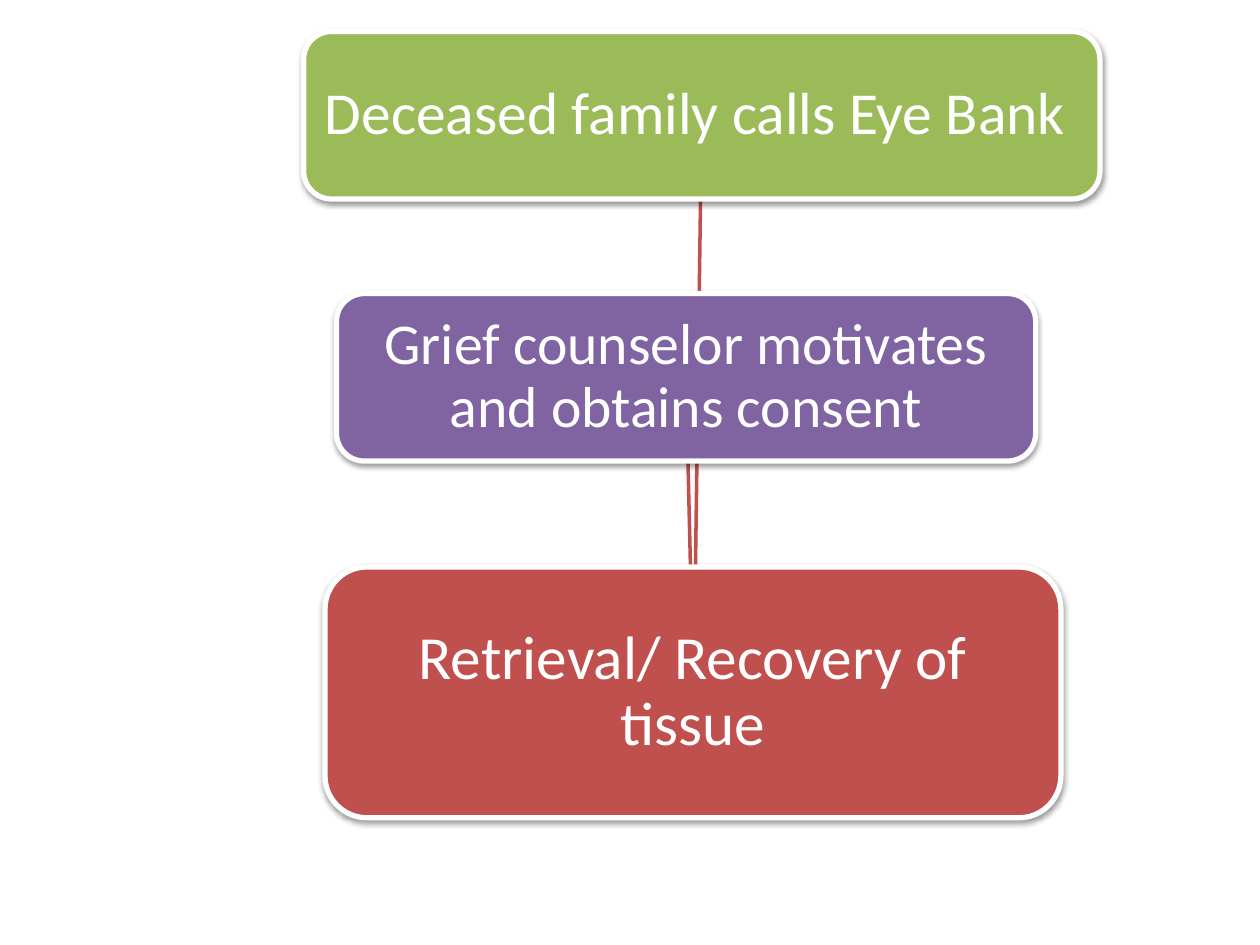
from lxml import etree
from pptx import Presentation
from pptx.dml.color import RGBColor
from pptx.enum.shapes import MSO_CONNECTOR, MSO_SHAPE
from pptx.enum.text import MSO_ANCHOR, PP_ALIGN
from pptx.oxml import parse_xml
from pptx.oxml.ns import qn
from pptx.util import Inches, Pt

ROUNDED = MSO_SHAPE.ROUNDED_RECTANGLE
STRAIGHT = MSO_CONNECTOR.STRAIGHT
MIDDLE = MSO_ANCHOR.MIDDLE
CENTER = PP_ALIGN.CENTER

THEME = {
    "font": "Calibri",
    "text": "FFFFFF",
    "border": "FFFFFF",
    "link": "C0504D",
    "border_width": 3,
    "link_width": 2,
    "line_spacing": 0.9,
}
SHADOW = """<a:effectLst xmlns:a="http://schemas.openxmlformats.org/drawingml/2006/main">
  <a:outerShdw blurRad="40000" dist="20000" dir="5400000" rotWithShape="0">
    <a:srgbClr val="000000"><a:alpha val="38000"/></a:srgbClr>
  </a:outerShdw>
</a:effectLst>"""

# Steps: text, fill, type size, inset, (left, top, width, height) in inches
STEPS = {
    "call": ("Deceased family calls Eye Bank ", "9BBB59", 34, 0.09, (2.41, 0.25, 6.32, 1.33)),
    "consent": ("Grief counselor motivates and obtains consent", "8064A2", 33, 0.09,
                (2.67, 2.33, 5.55, 1.33)),
    "retrieval": ("Retrieval/ Recovery of tissue", "C0504D", 35, 0.1, (2.58, 4.5, 5.84, 1.99)),
}
# Links: upper step, lower step, x at the upper end, x at the lower end
LINKS = [("call", "retrieval", 5.56, 5.52), ("consent", "retrieval", 5.46, 5.48)]


def color(name):
    return RGBColor.from_string(name)


def add_link(page, upper, lower, upper_x, lower_x):
    _, top, _, height = STEPS[upper][-1]
    lower_top = STEPS[lower][-1][1]
    link = page.shapes.add_connector(
        STRAIGHT, Inches(upper_x), Inches(top + height), Inches(lower_x), Inches(lower_top))
    link.line.color.rgb = color(THEME["link"])
    link.line.width = Pt(THEME["link_width"])
    etree.SubElement(link.element.spPr, qn("a:effectLst"))


def add_step(page, text, fill, size, inset, place):
    box = page.shapes.add_shape(ROUNDED, *map(Inches, place))
    box.fill.solid()
    box.fill.fore_color.rgb = color(fill)
    box.line.color.rgb = color(THEME["border"])
    box.line.width = Pt(THEME["border_width"])
    box.element.spPr.append(parse_xml(SHADOW))

    frame = box.text_frame
    frame.word_wrap = True
    frame.vertical_anchor = MIDDLE
    frame.margin_left = frame.margin_right = Inches(inset)
    frame.margin_top = frame.margin_bottom = Inches(inset)
    frame.text = text
    para = frame.paragraphs[0]
    para.alignment = CENTER
    para.line_spacing = THEME["line_spacing"]
    font = para.runs[0].font
    font.name, font.size = THEME["font"], Pt(size)
    font.color.rgb = color(THEME["text"])


def main():
    deck = Presentation()
    deck.slide_width, deck.slide_height = Inches(10), Inches(7.5)
    page = deck.slides.add_slide(deck.slide_layouts[6])

    # Links lie behind the steps
    for link in LINKS:
        add_link(page, *link)
    for step in STEPS.values():
        add_step(page, *step)

    deck.save("out.pptx")


if __name__ == "__main__":
    main()
